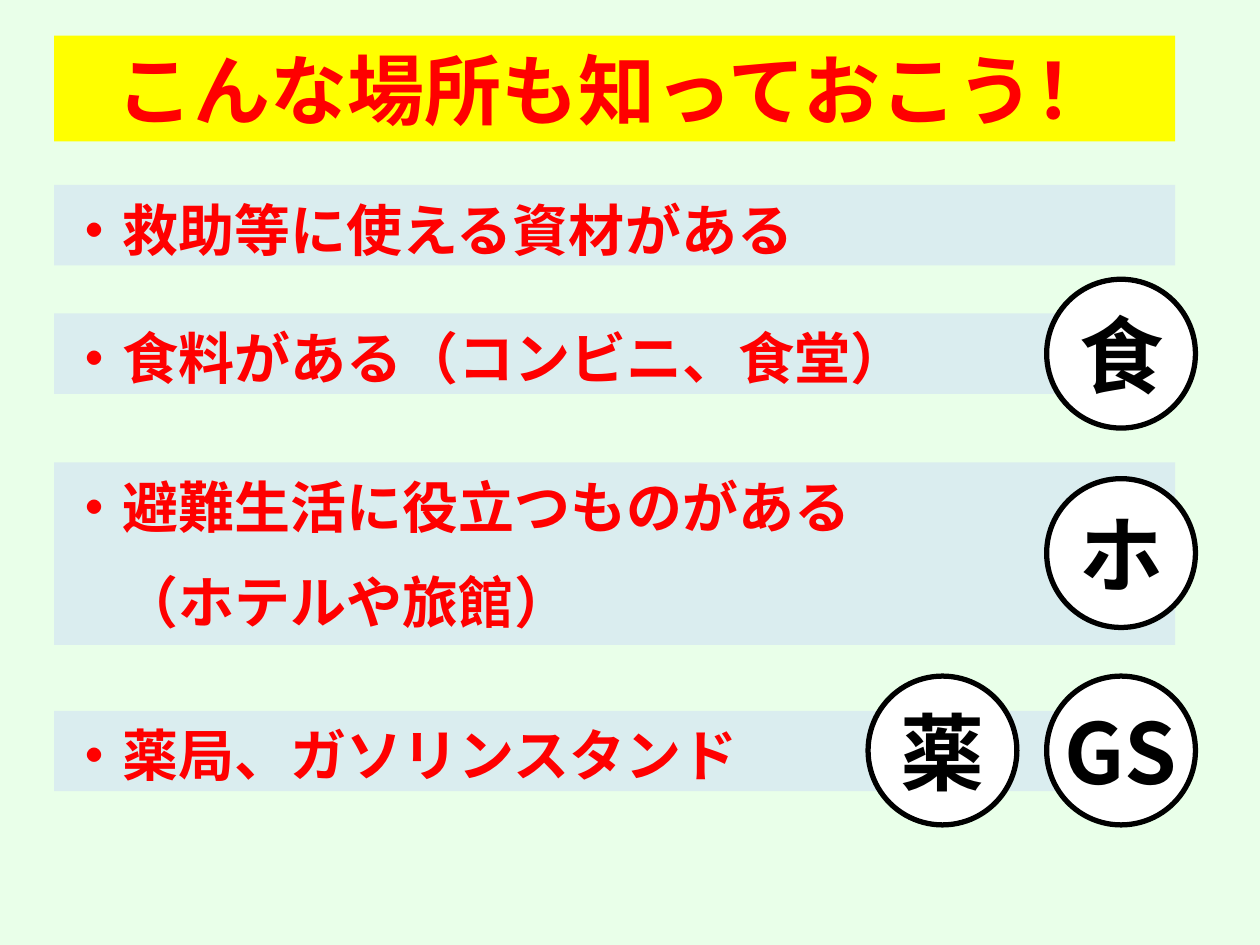
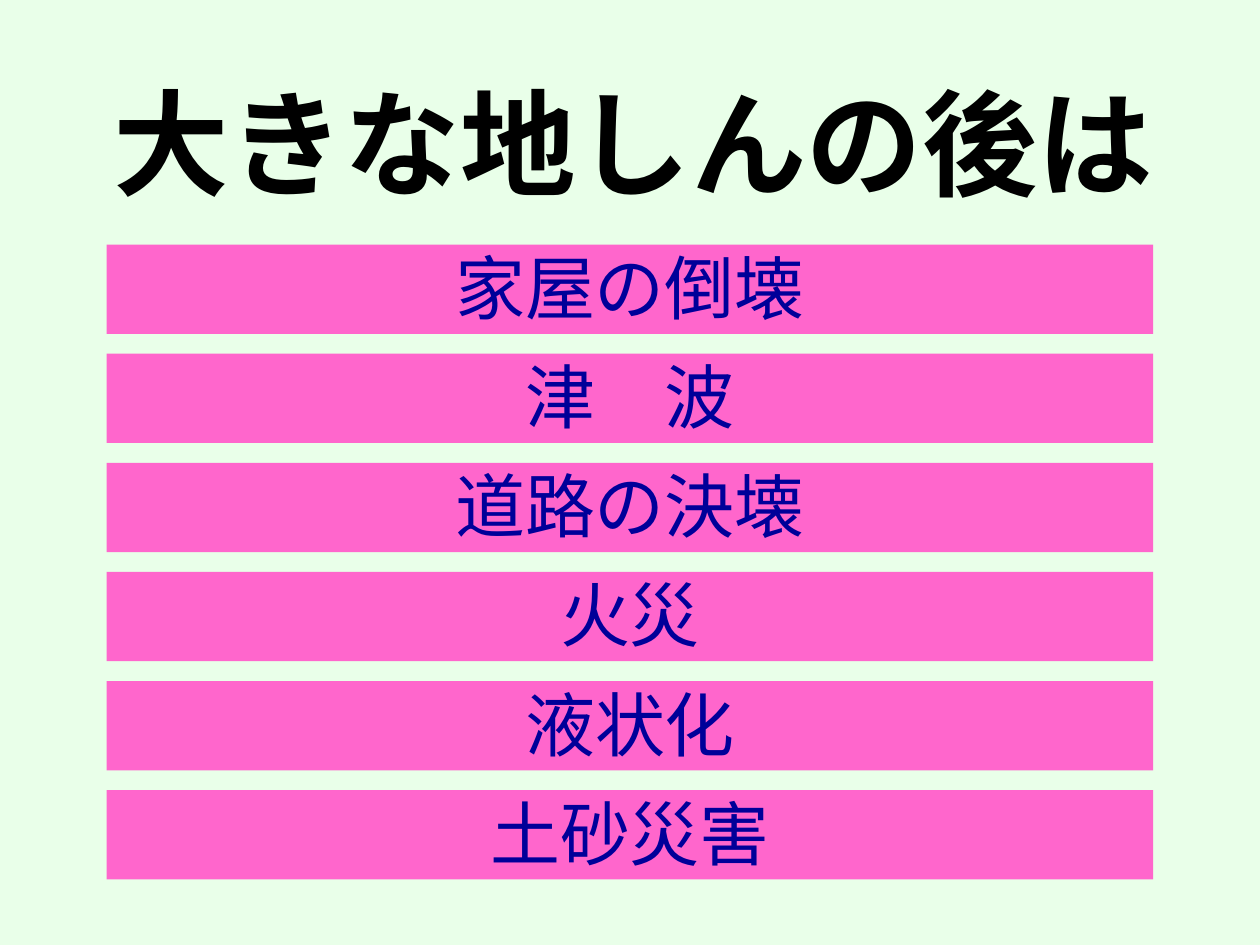
from pptx import Presentation
from pptx.dml.color import RGBColor
from pptx.enum.shapes import MSO_SHAPE
from pptx.enum.text import MSO_ANCHOR, MSO_AUTO_SIZE, PP_ALIGN
from pptx.util import Cm, Pt

RECT, OVAL = MSO_SHAPE.RECTANGLE, MSO_SHAPE.OVAL
TOP, MIDDLE = MSO_ANCHOR.TOP, MSO_ANCHOR.MIDDLE
LEFT, CENTER = PP_ALIGN.LEFT, PP_ALIGN.CENTER
NO_FIT = MSO_AUTO_SIZE.NONE

MINT = RGBColor(0xE9, 0xFF, 0xE9)
PALE_BLUE = RGBColor(0xDA, 0xED, 0xEF)
YELLOW = RGBColor(0xFF, 0xFF, 0x00)
PINK = RGBColor(0xFF, 0x66, 0xCC)
RED = RGBColor(0xFF, 0x00, 0x00)
NAVY = RGBColor(0x00, 0x00, 0x99)
BLACK = RGBColor(0x00, 0x00, 0x00)
WHITE = RGBColor(0xFF, 0xFF, 0xFF)
GOTHIC, ARIAL = "Noto Sans CJK JP", "Arial"


def write(sp, lines, size, color, font=GOTHIC, bold=True, align=CENTER, anchor=MIDDLE, wrap=True):
    tf = sp.text_frame
    tf.text = "\n".join(lines)
    tf.auto_size = NO_FIT
    tf.word_wrap = wrap
    tf.vertical_anchor = anchor
    for p in tf.paragraphs:
        p.alignment = align
        p.font.name = font
        p.font.size = Pt(size)
        p.font.bold = bold
        p.font.color.rgb = color
    return tf


def add_box(s, kind, x, y, w, h, fill):
    sp = s.shapes.add_shape(kind, Cm(x), Cm(y), Cm(w), Cm(h))
    sp.shadow.inherit = False
    sp.fill.solid()
    sp.fill.fore_color.rgb = fill
    sp.line.fill.background()
    return sp


prs = Presentation()
prs.slide_width, prs.slide_height = Cm(25.4), Cm(19.05)
bg = prs.slide_master.background.fill
bg.solid()
bg.fore_color.rgb = MINT
title_only = prs.slide_layouts[5]

s = prs.slides.add_slide(title_only)
title = s.shapes.title
title.left, title.top, title.width, title.height = Cm(1.09), Cm(0.72), Cm(22.6), Cm(2.13)
title.fill.solid()
title.fill.fore_color.rgb = YELLOW
write(title, ["こんな場所も知っておこう！"], 44, RED)

places = [
    (3.73, 1.62, ["・救助等に使える資材がある"]),
    (6.32, 1.62, ["・食料がある（コンビニ、食堂）"]),
    (9.32, 3.68, ["・避難生活に役立つものがある", "　（ホテルや旅館）"]),
    (14.33, 1.62, ["・薬局、ガソリンスタンド"]),
]
for y, h, lines in places:
    bar = add_box(s, RECT, 1.09, y, 22.6, h, PALE_BLUE)
    tf = write(bar, lines, 32, RED, align=LEFT, anchor=TOP)
    tf.margin_top = Cm(0.2)
    for p in tf.paragraphs:
        p.line_spacing = Pt(38.5)
    for p in tf.paragraphs[1:]:
        p.space_before = Pt(16)

for x, y, mark in [(21.1, 5.63, "食"), (17.5, 13.63, "薬"), (21.1, 13.63, "GS"), (21.1, 9.65, "ホ")]:
    badge = add_box(s, OVAL, x, y, 3, 3, WHITE)
    badge.line.color.rgb = BLACK
    badge.line.width = Pt(3)
    write(badge, [mark], 48, BLACK, wrap=False)

s = prs.slides.add_slide(title_only)
title = s.shapes.title
title.left, title.top, title.width, title.height = Cm(1.85), Cm(1.32), Cm(21.84), Cm(2.4)
write(title, ["大きな地しんの後は"], 66, BLACK, anchor=TOP, wrap=False)

hazards = ["家屋の倒壊", "津　波", "道路の決壊", "火災", "液状化", "土砂災害"]
for i, hazard in enumerate(hazards):
    bar = add_box(s, RECT, 2.15, 4.93 + 2.2 * i, 21.1, 1.8, PINK)
    tf = write(bar, [hazard], 40, NAVY, ARIAL, bold=False, anchor=TOP)
    tf.margin_top = 0

prs.save("out.pptx")
